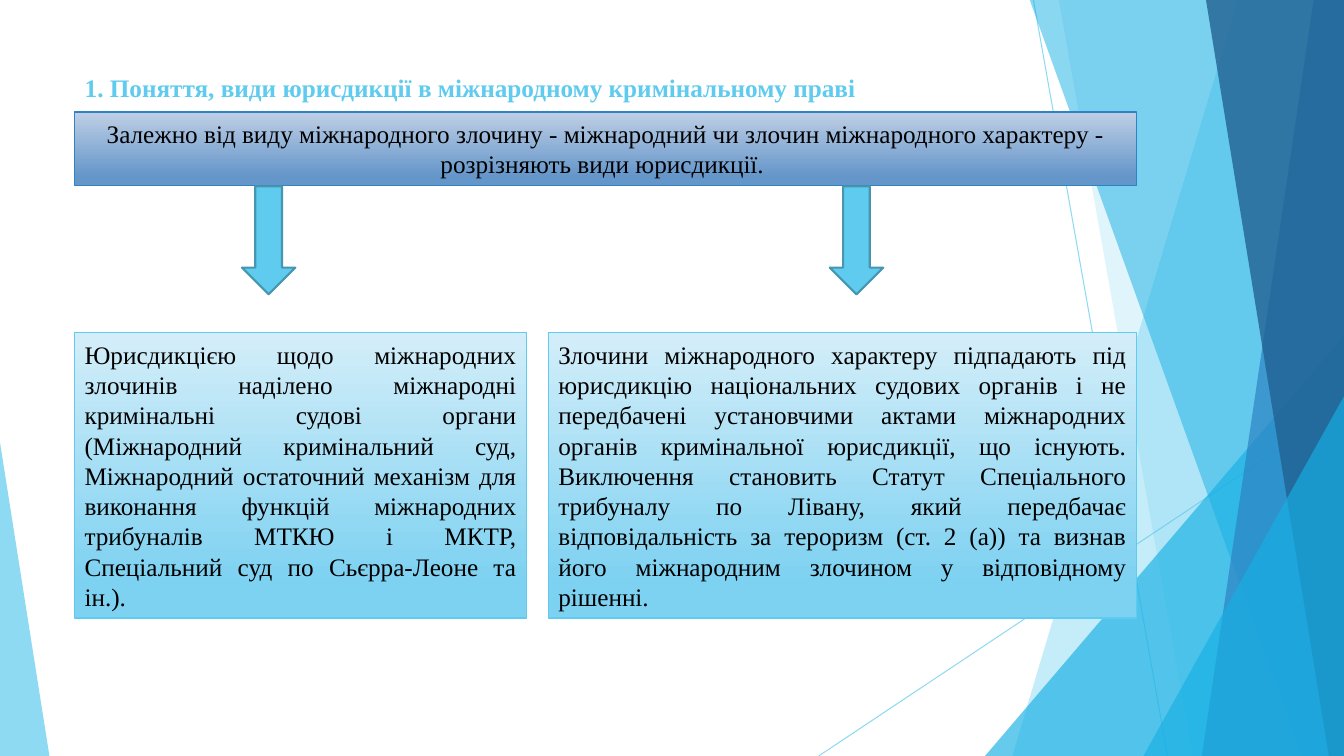
"""Build a slide on the kinds of jurisdiction in international criminal law."""
from dataclasses import dataclass

from lxml import etree
from pptx import Presentation
from pptx.dml.color import RGBColor
from pptx.enum.shapes import MSO_CONNECTOR, MSO_SHAPE
from pptx.enum.text import MSO_ANCHOR, MSO_AUTO_SIZE, PP_ALIGN
from pptx.oxml.ns import qn
from pptx.util import Inches, Pt

LINE = MSO_CONNECTOR.STRAIGHT
RECT, ARROW, WEDGE = MSO_SHAPE.RECTANGLE, MSO_SHAPE.DOWN_ARROW, MSO_SHAPE.ISOSCELES_TRIANGLE
TOP, MID = MSO_ANCHOR.TOP, MSO_ANCHOR.MIDDLE
LEFT, MIDDLE, FULL = PP_ALIGN.LEFT, PP_ALIGN.CENTER, PP_ALIGN.JUSTIFY
FIXED, GROW = MSO_AUTO_SIZE.NONE, MSO_AUTO_SIZE.SHAPE_TO_FIT_TEXT


@dataclass(frozen=True)
class Theme:
    sky: str = "5FCBEF"
    aqua: str = "17B0E4"
    blue: str = "2E83C3"
    navy: str = "226292"
    edge: str = "4696B1"
    ink: str = "000000"
    band: tuple = ("BFCFE5", "6596CA")
    card: tuple = ("D4EEF9", "7DD1F1")
    font: str = "Times New Roman"
    size: int = 18


theme = Theme()


def paint(shape, fill, line=None, width=1, alpha=None):
    if isinstance(fill, tuple):
        shape.fill.gradient()
        shape.fill.gradient_angle = 270
        for stop, color, place in zip(shape.fill.gradient_stops, fill, (0, 0.88)):
            stop.color.rgb = RGBColor.from_string(color)
            stop.position = place
    else:
        shape.fill.solid()
        shape.fill.fore_color.rgb = RGBColor.from_string(fill)
    if line:
        shape.line.color.rgb = RGBColor.from_string(line)
        shape.line.width = Pt(width)
    else:
        shape.line.fill.background()
    if alpha:
        color = next(shape.element.iter(qn("a:srgbClr")))
        etree.SubElement(color, qn("a:alpha")).set("val", str(alpha * 1000))
    shape.shadow.inherit = False


def write(shape, text, color=theme.ink, bold=False, align=FULL, anchor=MID, fit=FIXED):
    frame = shape.text_frame
    frame.word_wrap = True
    frame.auto_size = fit
    frame.vertical_anchor = anchor
    para = frame.paragraphs[0]
    para.alignment = align
    para.space_before = Pt(0)
    run = para.add_run()
    run.text = text
    run.font.name = theme.font
    run.font.size = Pt(theme.size)
    run.font.bold = bold
    run.font.color.rgb = RGBColor.from_string(color)


deck = Presentation()
deck.slide_width, deck.slide_height = Inches(13.33), Inches(7.5)
slide = deck.slides.add_slide(deck.slide_layouts[1])
shapes = slide.shapes
title, band = shapes.title, slide.placeholders[1]

for ends in ((10.25, 0, 11.58, 7.5), (13.33, 4.03, 8.12, 7.5)):
    ray = shapes.add_connector(LINE, *map(Inches, ends))
    ray.line.color.rgb = RGBColor.from_string(theme.sky)
    ray.line.width = Pt(0.75)
    color = next(ray.element.iter(qn("a:srgbClr")))
    etree.SubElement(color, qn("a:alpha")).set("val", "70000")
    etree.SubElement(ray.element.spPr, qn("a:effectLst"))

facets = (
    ("pane", (12.28, 10.04), theme.sky, 36),
    ("pane", (10.5, 11.83), theme.sky, 20),
    ("wedge", (9.77, 3.33, 3.56, 4.17, 1), theme.aqua, 66),
    ("pane", (10.21, 12.91), theme.aqua, 50),
    ("pane", (13.03, 11.92), theme.blue, 70),
    ("pane", (11.96, 13.18), theme.navy, 80),
    ("wedge", (11.34, 3.93, 1.99, 3.57, 1), theme.aqua, 66),
    ("wedge", (0, 4.39, 0.49, 3.11, 0), theme.sky, 70),
)
for kind, spots, color, alpha in facets:
    if kind == "pane":
        high, low = map(Inches, spots)
        head, foot, side = Inches(-0.01), Inches(7.5), Inches(13.33)
        path = shapes.build_freeform(high, head)
        path.add_line_segments([(side, head), (side, foot), (low, foot)])
        facet = path.convert_to_shape()
    else:
        facet = shapes.add_shape(WEDGE, *map(Inches, spots[:4]))
        facet.adjustments[0] = spots[4]
    paint(facet, color, alpha=alpha)

for holder, box in ((title, (0.74, 0.67, 9.4, 0.59)), (band, (0.74, 1.11, 10.53, 0.73))):
    holder.left, holder.top, holder.width, holder.height = map(Inches, box)
    shapes.element.append(holder.element)

write(title, "1. Поняття, види юрисдикції в міжнародному кримінальному праві",
      color=theme.sky, bold=True, align=LEFT, anchor=TOP)
paint(band, theme.band, theme.blue)
write(band, "Залежно від виду міжнародного злочину - міжнародний чи злочин міжнародного "
      "характеру - розрізняють види юрисдикції. ", align=MIDDLE)
props = next(band.element.iter(qn("a:pPr")))
props.set("marL", "0")
props.set("indent", "0")
etree.SubElement(props, qn("a:buNone"))

for left in (2.4, 8.23):
    arrow = shapes.add_shape(ARROW, *map(Inches, (left, 1.85, 0.53, 1.07)))
    paint(arrow, theme.sky, theme.edge, 1.5)

cards = (
    (0.74, 4.48, "Юрисдикцією щодо міжнародних злочинів наділено міжнародні кримінальні судові "
     "органи (Міжнародний кримінальний суд, Міжнародний остаточний механізм для виконання "
     "функцій міжнародних трибуналів МТКЮ і МКТР, Спеціальний суд по Сьєрра-Леоне та ін.)."),
    (5.44, 5.83, "Злочини міжнародного характеру підпадають під юрисдикцію національних судових "
     "органів і не передбачені установчими актами міжнародних органів кримінальної юрисдикції, "
     "що існують. Виключення становить Статут Спеціального трибуналу по Лівану, який передбачає "
     "відповідальність за тероризм (ст. 2 (а)) та визнав його міжнародним злочином у "
     "відповідному рішенні."),
)
for left, width, text in cards:
    card = shapes.add_shape(RECT, *map(Inches, (left, 3.3, width, 2.83)))
    paint(card, theme.card, theme.sky)
    write(card, text, fit=GROW)

deck.save("out.pptx")
